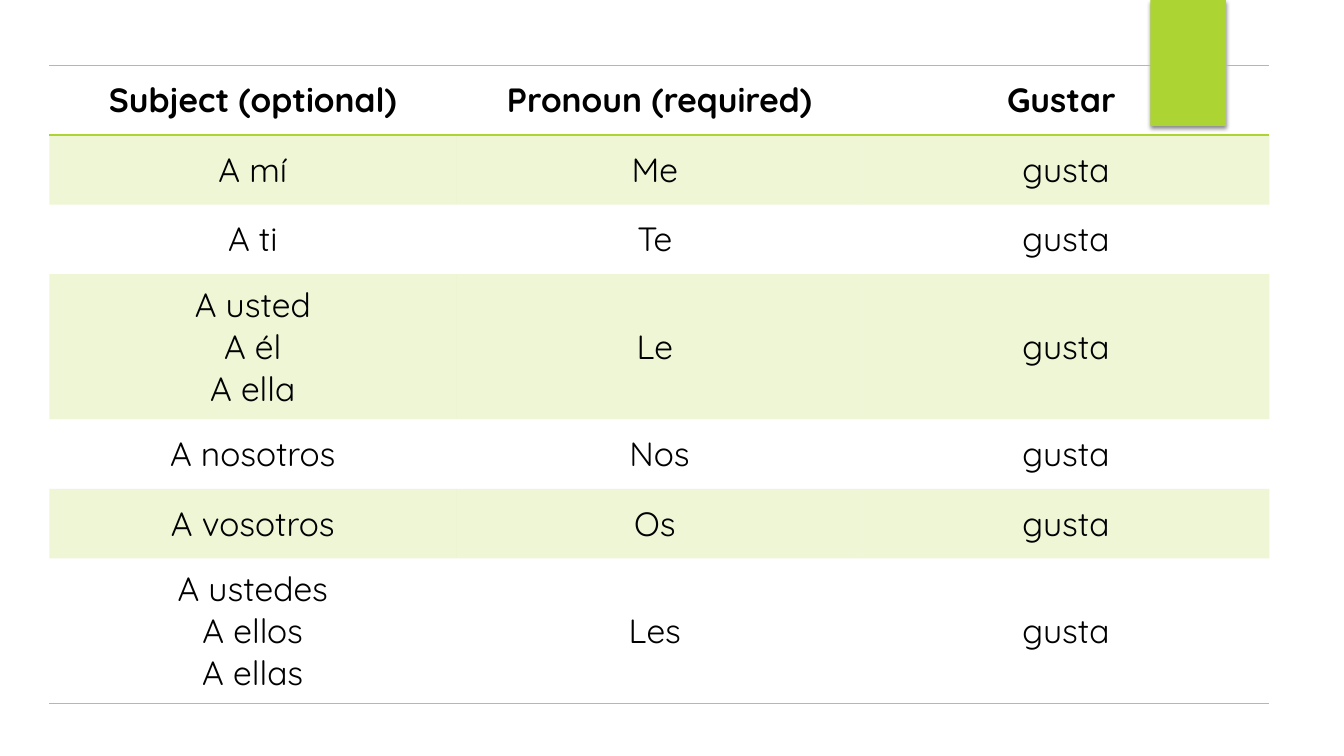
from lxml.etree import SubElement
from pptx import Presentation
from pptx.dml.color import RGBColor
from pptx.enum.shapes import MSO_SHAPE as Shape
from pptx.enum.text import MSO_ANCHOR as Anchor, PP_ALIGN as Align
from pptx.oxml import parse_xml
from pptx.oxml.ns import nsdecls, qn
from pptx.util import Inches, Pt

GREEN = "ACD433"
NO_STYLE = "{2D5ABB26-0587-4C30-8999-92F81FD0307C}"
LINE_HEIGHT, TALL_HEIGHT = 0.69, 1.44


def color(hex_code):
    return RGBColor.from_string(hex_code)


def write(frame, text, font="Quicksand", size=24, ink="000000", bold=False):
    for number, line in enumerate(text.split("\n")):
        paragraph = frame.add_paragraph() if number else frame.paragraphs[0]
        paragraph.alignment = Align.CENTER
        run = paragraph.add_run()
        run.text = line
        run.font.name, run.font.size, run.font.bold = font, Pt(size), bold
        run.font.color.rgb = color(ink)


deck = Presentation()
deck.slide_width, deck.slide_height = Inches(13.33), Inches(7.5)
slide = deck.slides.add_slide(deck.slide_layouts[6])

ribbon = slide.shapes.add_shape(
    Shape.RECTANGLE, Inches(11.41), 0, Inches(0.75), deck.slide_height // 6)
ribbon.shadow.inherit = False
ribbon.fill.solid()
ribbon.fill.fore_color.rgb = color(GREEN)
ribbon.line.fill.background()
ribbon_effects = ribbon._element.spPr.find(qn("a:effectLst"))
ribbon_effects.append(parse_xml(
    f'<a:outerShdw {nsdecls("a")} blurRad="{Pt(3)}" dist="{Pt(2)}" dir="5400000" '
    'algn="t" rotWithShape="0"><a:srgbClr val="000000"><a:alpha val="45000"/>'
    '</a:srgbClr></a:outerShdw>'))

conjugation = [
    ("Subject (optional)", "Pronoun (required)", "Gustar "),
    ("A mí", "Me ", "gusta"),
    ("A ti", "Te ", "gusta"),
    ("A usted\nA él\nA ella", "Le ", "gusta"),
    ("A nosotros", "Nos", "gusta"),
    ("A vosotros", "Os ", "gusta"),
    ("A ustedes\nA ellos\nA ellas", "Les ", "gusta"),
]
heights = [TALL_HEIGHT if "\n" in words[0] else LINE_HEIGHT for words in conjugation]
last = len(conjugation) - 1
borders = {0: ("lnT", "lnB"), last: ("lnB",)}

grid = slide.shapes.add_table(
    len(conjugation), 3, Inches(0.49), Inches(0.65),
    Inches(12.1), Inches(sum(heights))).table
grid._tbl.tblPr.find(qn("a:tableStyleId")).text = NO_STYLE
grid.first_row = grid.horz_banding = False

for row, words in enumerate(conjugation):
    grid.rows[row].height = Inches(heights[row])
    for column, word in enumerate(words):
        cell = grid.cell(row, column)
        cell.vertical_anchor = Anchor.MIDDLE
        write(cell.text_frame, word, bold=row == 0)
        properties = cell._tc.get_or_add_tcPr()
        for side in borders.get(row, ()):
            properties.append(parse_xml(
                f'<a:{side} {nsdecls("a")} w="{Pt(1)}"><a:solidFill>'
                f'<a:srgbClr val="{GREEN}"/></a:solidFill></a:{side}>'))
        if row % 2:
            cell.fill.solid()
            cell.fill.fore_color.rgb = color(GREEN)
            tint = properties.find(".//" + qn("a:srgbClr"))
            SubElement(tint, qn("a:alpha"), val="20000")
        else:
            cell.fill.background()

deck.save("out.pptx")
